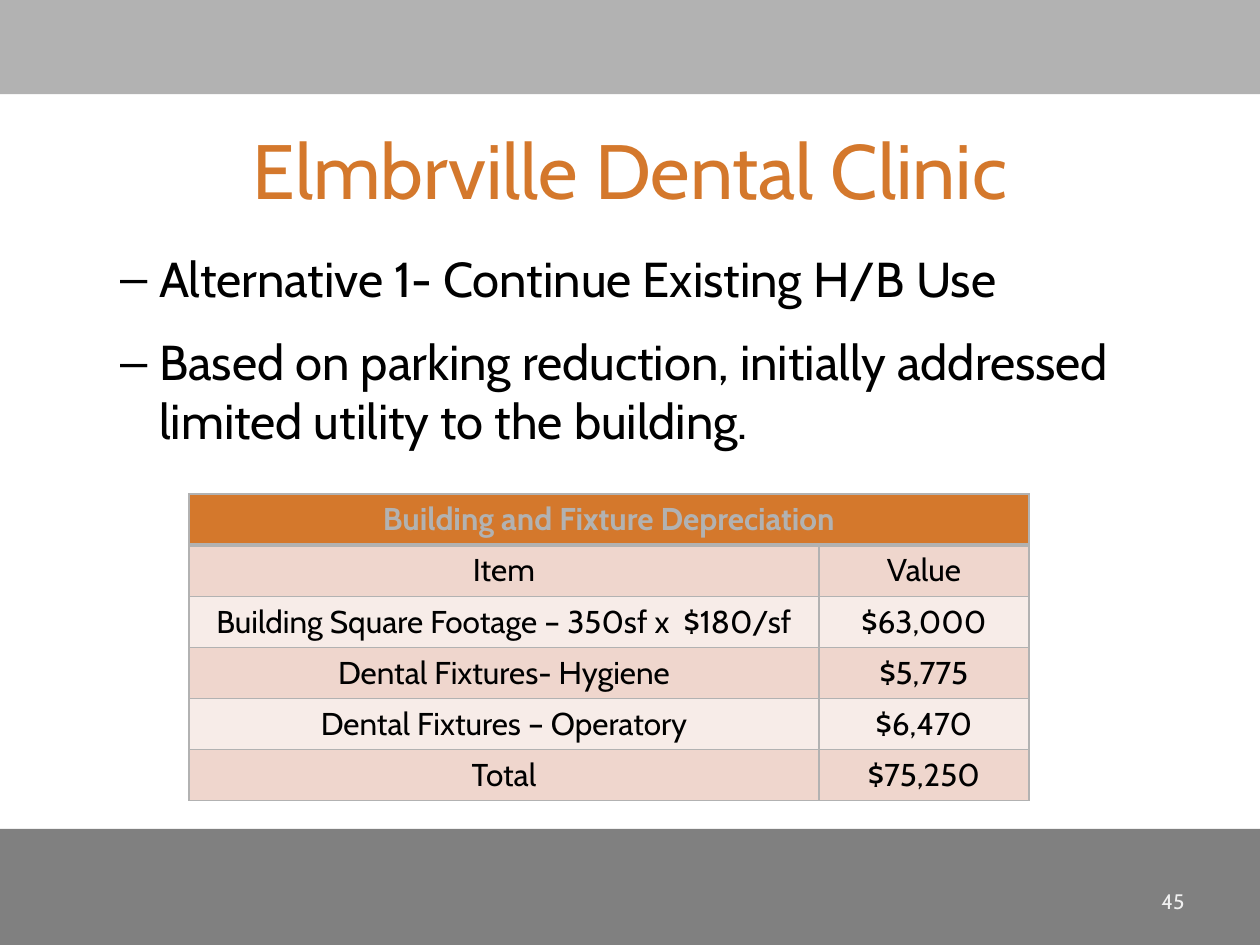
from dataclasses import dataclass

from lxml.etree import SubElement
from pptx import Presentation
from pptx.dml.color import RGBColor
from pptx.enum.shapes import MSO_SHAPE as Shape
from pptx.enum.text import MSO_ANCHOR as Anchor, MSO_AUTO_SIZE as AutoSize, PP_ALIGN as Align
from pptx.oxml.ns import qn
from pptx.util import Cm, Pt


@dataclass(frozen=True)
class Theme:
    font: str = "Cabin"
    accent: str = "D4782C"
    text: str = "000000"
    paper: str = "FFFFFF"
    top_band: str = "B2B2B2"
    bottom_band: str = "808080"
    page_number: str = "F0F0F0"
    rule: str = "B2B2B2"
    row_fills: tuple[str, str] = ("EFD6CD", "F7ECE8")
    title_size: int = 44
    body_size: int = 28
    table_size: int = 18
    number_size: int = 12


@dataclass(frozen=True)
class Box:
    """Position and size in centimetres."""
    left: float
    top: float
    width: float
    height: float

    def lengths(self) -> tuple:
        return Cm(self.left), Cm(self.top), Cm(self.width), Cm(self.height)


@dataclass(frozen=True)
class Band:
    box: Box
    color: str


@dataclass(frozen=True)
class CostRow:
    item: str
    value: str


THEME = Theme()
BANDS = [
    Band(Box(0, 16.71, 25.4, 2.34), THEME.bottom_band),
    Band(Box(0, 0, 25.4, 1.9), THEME.top_band),
]
POINTS = [
    "Alternative 1- Continue Existing H/B Use",
    "Based on parking reduction, initially addressed limited utility to the building.",
]
TABLE_HEADING = "Building and Fixture Depreciation"
COST_ROWS = [
    CostRow("Item", "Value"),
    CostRow("Building Square Footage – 350sf x  $180/sf", "$63,000"),
    CostRow("Dental Fixtures- Hygiene", "$5,775"),
    CostRow("Dental Fixtures – Operatory", "$6,470"),
    CostRow("Total", "$75,250"),
]
COLUMN_WIDTHS = (12.7, 4.23)
ROW_HEIGHT = 1.03


def paint(target, color: str) -> None:
    target.fill.solid()
    target.fill.fore_color.rgb = RGBColor.from_string(color)


def style_text(frame, size: int, color: str, align: Align, bold: bool = False) -> None:
    for paragraph in frame.paragraphs:
        paragraph.alignment = align
        for run in paragraph.runs:
            run.font.name = THEME.font
            run.font.size = Pt(size)
            run.font.bold = bold
            run.font.color.rgb = RGBColor.from_string(color)


def draw_band(slide, band: Band) -> None:
    strip = slide.shapes.add_shape(Shape.RECTANGLE, *band.box.lengths())
    strip.shadow.inherit = False
    paint(strip, band.color)
    strip.line.fill.background()


def place_placeholder(holder, box: Box, anchor: Anchor):
    holder.left, holder.top, holder.width, holder.height = box.lengths()
    paint(holder, THEME.paper)
    frame = holder.text_frame
    frame.auto_size = AutoSize.NONE
    frame.vertical_anchor = anchor
    frame.margin_left = frame.margin_right = Cm(0.51)
    frame.margin_top = frame.margin_bottom = Cm(0.13)
    return frame


def write_points(frame, points: list[str]) -> None:
    frame.text = "\n".join(points)
    for index, paragraph in enumerate(frame.paragraphs):
        paragraph.level = 1
        paragraph.space_before = Pt(14 if index else 0)
        properties = paragraph._p.get_or_add_pPr()
        properties.set("marL", str(Cm(2.06)))
        properties.set("indent", str(Cm(-0.79)))
        SubElement(properties, qn("a:buChar")).set("char", "–")
    style_text(frame, THEME.body_size, THEME.text, Align.LEFT)


def set_borders(cell, top: float = 1, bottom: float = 1) -> None:
    """Rule all four sides; widths are in points."""
    properties = cell._tc.get_or_add_tcPr()
    widths = {"a:lnL": 1, "a:lnR": 1, "a:lnT": top, "a:lnB": bottom}
    for position, (side, width) in enumerate(widths.items()):
        line = SubElement(properties, qn(side), w=str(Pt(width)))
        color = SubElement(SubElement(line, qn("a:solidFill")), qn("a:srgbClr"))
        color.set("val", THEME.rule)
        properties.insert(position, line)


def draw_cost_table(slide, left: float, top: float) -> None:
    row_count = len(COST_ROWS) + 1
    box = Box(left, top, sum(COLUMN_WIDTHS), ROW_HEIGHT * row_count)
    table = slide.shapes.add_table(row_count, len(COLUMN_WIDTHS), *box.lengths()).table
    for column, width in zip(table.columns, COLUMN_WIDTHS):
        column.width = Cm(width)
    for row in table.rows:
        row.height = Cm(ROW_HEIGHT)

    heading = table.cell(0, 0)
    heading.merge(table.cell(0, 1))
    heading.text_frame.text = TABLE_HEADING
    style_text(heading.text_frame, THEME.table_size, THEME.rule, Align.CENTER, bold=True)
    for cell in table.rows[0].cells:
        paint(cell, THEME.accent)
        set_borders(cell, bottom=3)

    for index, cost in enumerate(COST_ROWS):
        for cell, wording in zip(table.rows[index + 1].cells, (cost.item, cost.value)):
            cell.text_frame.text = wording
            style_text(cell.text_frame, THEME.table_size, THEME.text, Align.CENTER)
            paint(cell, THEME.row_fills[index % 2])
            set_borders(cell, top=1 if index else 3)


def draw_page_number(slide, number: str) -> None:
    frame = slide.shapes.add_textbox(*Box(18.21, 17.65, 5.92, 1.02).lengths()).text_frame
    frame.word_wrap = True
    frame.vertical_anchor = Anchor.MIDDLE
    frame.text = number
    style_text(frame, THEME.number_size, THEME.page_number, Align.RIGHT)


def main() -> None:
    deck = Presentation()
    deck.slide_width, deck.slide_height = Cm(25.4), Cm(19.05)
    slide = deck.slides.add_slide(deck.slide_layouts[1])
    for band in BANDS:
        draw_band(slide, band)

    title = place_placeholder(slide.shapes.title, Box(0.64, 2.34, 24.13, 2.11), Anchor.MIDDLE)
    title.text = "Elmbrville Dental Clinic"
    style_text(title, THEME.title_size, THEME.accent, Align.CENTER)

    body = place_placeholder(slide.placeholders[1], Box(0.64, 4.88, 24.33, 11.43), Anchor.TOP)
    write_points(body, POINTS)

    draw_cost_table(slide, left=3.81, top=9.96)
    draw_page_number(slide, "45")
    deck.save("out.pptx")


if __name__ == "__main__":
    main()
